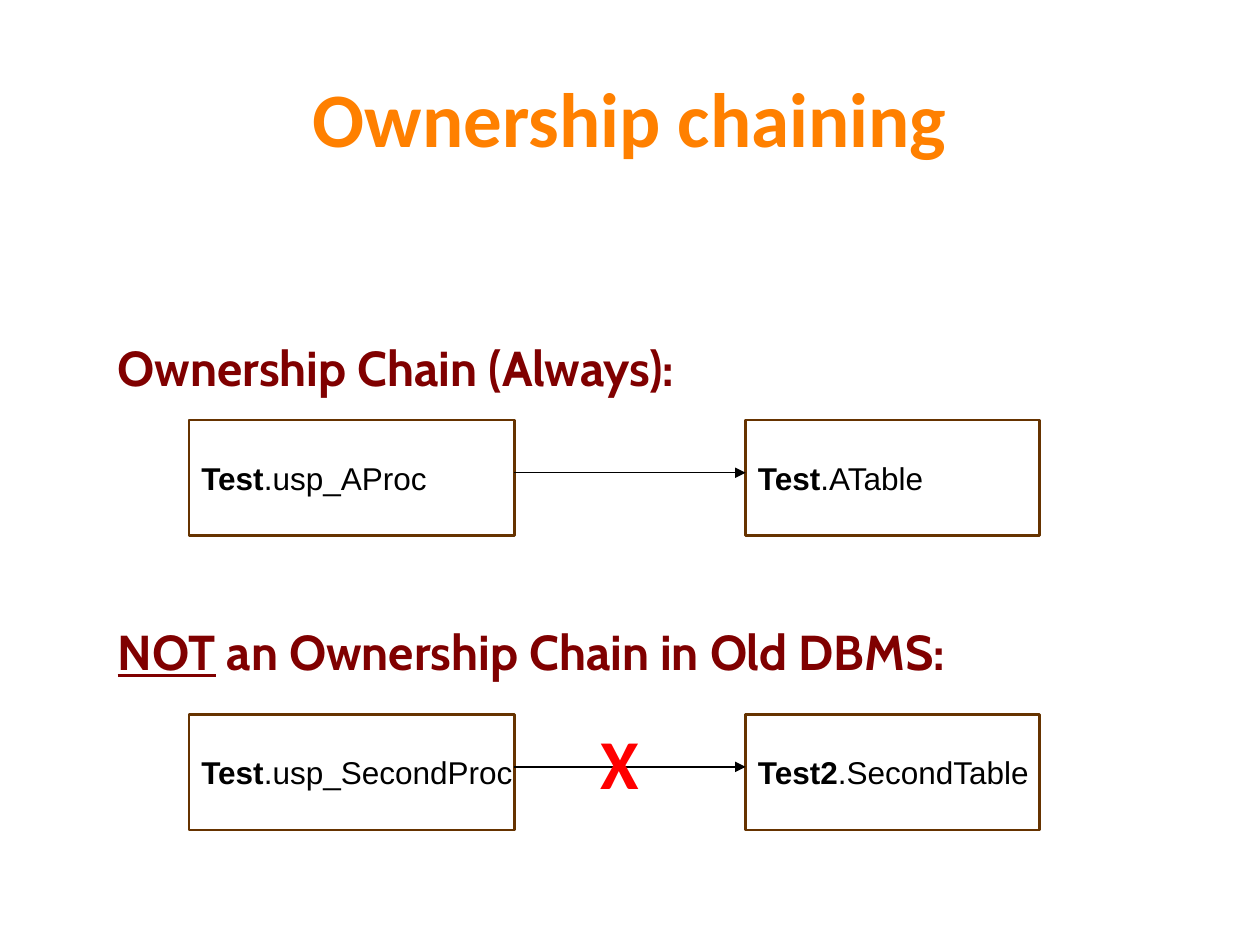
from dataclasses import dataclass

from lxml.etree import SubElement
from pptx import Presentation
from pptx.dml.color import RGBColor
from pptx.enum.shapes import MSO_CONNECTOR, MSO_SHAPE
from pptx.enum.text import MSO_ANCHOR, MSO_AUTO_SIZE, PP_ALIGN
from pptx.oxml.ns import qn
from pptx.slide import Slide
from pptx.text.text import TextFrame
from pptx.util import Cm, Pt

ORANGE = RGBColor(0xFF, 0x80, 0x00)
MAROON = RGBColor(0x80, 0x00, 0x00)
BROWN = RGBColor(0x66, 0x33, 0x00)
RED = RGBColor(0xFF, 0x00, 0x00)
BLACK = RGBColor(0x00, 0x00, 0x00)
WHITE = RGBColor(0xFF, 0xFF, 0xFF)

# Shared columns and sizes, in centimetres
HEADING_LEFT = 2.12
SOURCE_LEFT, SOURCE_WIDTH = 3.81, 6.56
TARGET_LEFT, TARGET_WIDTH = 15.03, 5.93
BOX_HEIGHT = 2.33
ARROW_DROP = 1.06


@dataclass(frozen=True)
class Span:
    text: str
    bold: bool = True
    underline: bool = False


@dataclass(frozen=True)
class Style:
    font: str
    size: int
    color: RGBColor


@dataclass(frozen=True)
class Chain:
    heading: list[Span]
    heading_top: float
    heading_width: float
    box_top: float
    source: list[Span]
    target: list[Span]


TITLE_STYLE = Style("Calibri", 44, ORANGE)
HEADING_STYLE = Style("Cabin", 28, MAROON)
BOX_STYLE = Style("Arial", 18, BLACK)
CROSS_STYLE = Style("Calibri", 40, RED)

CHAINS = [
    Chain([Span("Ownership Chain (Always):")], 6.68, 11.94, 8.47,
          [Span("Test"), Span(".usp_AProc", bold=False)],
          [Span("Test"), Span(".ATable", bold=False)]),
    Chain([Span("NOT", underline=True), Span(" ", bold=False),
           Span("an Ownership Chain in Old DBMS:")], 12.4, 17.35, 14.4,
          [Span("Test"), Span(".usp_SecondProc", bold=False)],
          [Span("Test2"), Span(".SecondTable", bold=False)]),
]


def write_spans(frame: TextFrame, spans: list[Span], style: Style,
                align: PP_ALIGN = PP_ALIGN.LEFT) -> None:
    para = frame.paragraphs[0]
    para.alignment = align
    for span in spans:
        run = para.add_run()
        run.text = span.text
        run.font.name = style.font
        run.font.size = Pt(style.size)
        run.font.color.rgb = style.color
        run.font.bold = span.bold
        run.font.underline = span.underline


def add_label(slide: Slide, left: float, top: float, width: float,
              height: float, spans: list[Span], style: Style) -> None:
    label = slide.shapes.add_textbox(Cm(left), Cm(top), Cm(width), Cm(height))
    frame = label.text_frame
    frame.word_wrap = False
    frame.auto_size = MSO_AUTO_SIZE.SHAPE_TO_FIT_TEXT
    write_spans(frame, spans, style)


def add_box(slide: Slide, left: float, top: float, width: float,
            spans: list[Span]) -> None:
    box = slide.shapes.add_shape(MSO_SHAPE.RECTANGLE, Cm(left), Cm(top),
                                 Cm(width), Cm(BOX_HEIGHT))
    box.shadow.inherit = False
    box.fill.solid()
    box.fill.fore_color.rgb = WHITE
    box.line.color.rgb = BROWN
    box.line.width = Pt(1.5)
    box.text_frame.word_wrap = False
    box.text_frame.vertical_anchor = MSO_ANCHOR.MIDDLE
    write_spans(box.text_frame, spans, BOX_STYLE)


def add_arrow(slide: Slide, start: float, end: float, height: float) -> None:
    arrow = slide.shapes.add_connector(MSO_CONNECTOR.STRAIGHT, Cm(start),
                                       Cm(height), Cm(end), Cm(height))
    arrow.line.color.rgb = BLACK
    arrow.line.width = Pt(0.75)
    SubElement(arrow.line._get_or_add_ln(), qn("a:tailEnd"), type="triangle")
    SubElement(arrow._element.spPr, qn("a:effectLst"))


def add_chain(slide: Slide, chain: Chain) -> None:
    add_box(slide, SOURCE_LEFT, chain.box_top, SOURCE_WIDTH, chain.source)
    add_box(slide, TARGET_LEFT, chain.box_top, TARGET_WIDTH, chain.target)
    add_arrow(slide, SOURCE_LEFT + SOURCE_WIDTH, TARGET_LEFT,
              chain.box_top + ARROW_DROP)
    add_label(slide, HEADING_LEFT, chain.heading_top, chain.heading_width,
              1.45, chain.heading, HEADING_STYLE)


def main() -> None:
    deck = Presentation()
    deck.slide_width, deck.slide_height = Cm(25.4), Cm(19.05)
    page = deck.slides.add_slide(deck.slide_layouts[6])

    # Title
    title = page.shapes.add_textbox(Cm(1.27), Cm(0.76), Cm(22.86), Cm(3.18))
    title.text_frame.word_wrap = True
    title.text_frame.vertical_anchor = MSO_ANCHOR.MIDDLE
    write_spans(title.text_frame, [Span("Ownership chaining")], TITLE_STYLE,
                PP_ALIGN.CENTER)

    # Valid and broken chains
    for chain in CHAINS:
        add_chain(page, chain)

    # Cross over the broken chain
    add_label(page, 11.86, 14.38, 1.47, 1.96, [Span("X")], CROSS_STYLE)

    deck.save("out.pptx")


if __name__ == "__main__":
    main()
